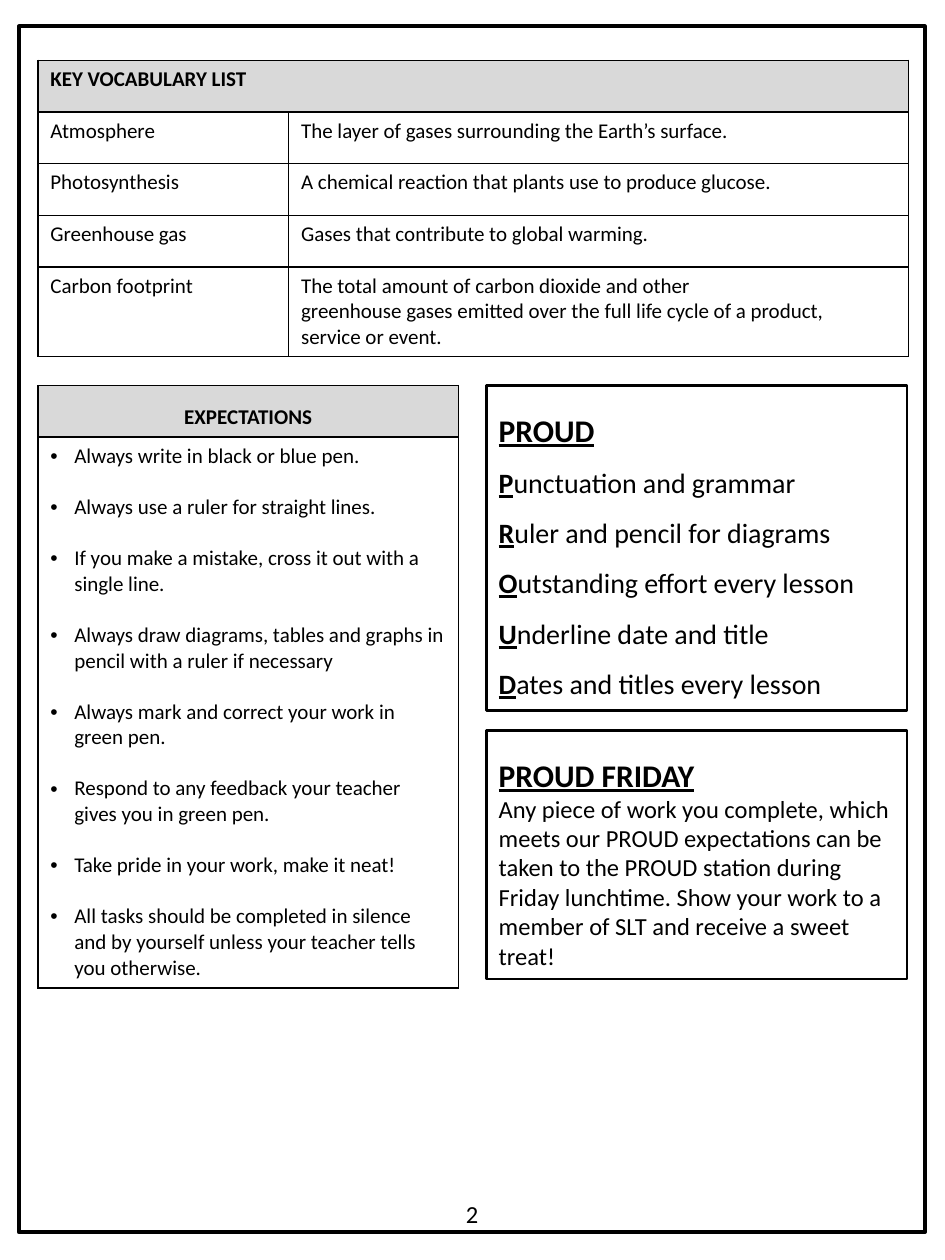
from lxml.etree import SubElement
from pptx import Presentation
from pptx.dml.color import RGBColor
from pptx.enum.shapes import MSO_SHAPE
from pptx.enum.text import MSO_ANCHOR, MSO_AUTO_SIZE, PP_ALIGN
from pptx.oxml.ns import qn
from pptx.util import Inches, Pt

COLORS = {"ink": "000000", "header": "D9D9D9"}
PLAIN = {"name": "Calibri", "size": Pt(12), "bold": False, "underline": False}
BOLD = PLAIN | {"bold": True}
HEADING = BOLD | {"size": Pt(18), "underline": True}
INITIAL = HEADING | {"size": Pt(16)}
REST = PLAIN | {"size": Pt(16)}
BODY = PLAIN | {"size": Pt(14)}
WIDE = {"line_spacing": 1.5}


def write_paragraph(frame, runs, layout):
    paragraph = frame.add_paragraph() if frame.text else frame.paragraphs[0]
    for name, value in ({"alignment": PP_ALIGN.LEFT} | layout).items():
        setattr(paragraph, name, value)
    for text, font_format in runs:
        run = paragraph.add_run()
        run.text = text
        for name, value in font_format.items():
            setattr(run.font, name, value)
        run.font.color.rgb = RGBColor.from_string(COLORS["ink"])
    return paragraph


def add_ruled_table(left, top, widths, heights):
    table = slide.shapes.add_table(
        len(heights), len(widths), Inches(left), Inches(top), Inches(sum(widths)), Inches(sum(heights))
    ).table
    table.first_row = False
    table.horz_banding = False
    for column, width in zip(table.columns, widths):
        column.width = Inches(width)
    for row, height in zip(table.rows, heights):
        row.height = Inches(height)
    for index, cell in enumerate(table.iter_cells()):
        properties = cell._tc.get_or_add_tcPr()
        for side in ("a:lnL", "a:lnR", "a:lnT", "a:lnB"):
            border = SubElement(properties, qn(side), w=str(Pt(1)))
            fill = SubElement(border, qn("a:solidFill"))
            SubElement(fill, qn("a:srgbClr"), val=COLORS["ink"])
        if index < len(widths):
            cell.fill.solid()
            cell.fill.fore_color.rgb = RGBColor.from_string(COLORS["header"])
        else:
            cell.fill.background()
    return table


presentation = Presentation()
presentation.slide_width = Inches(7.5)
presentation.slide_height = Inches(10)
slide = presentation.slides.add_slide(presentation.slide_layouts[6])

proud_lines = [([("PROUD", HEADING)], WIDE)]
for line in (
    "Punctuation and grammar",
    "Ruler and pencil for diagrams",
    "Outstanding effort every lesson",
    "Underline date and title",
    "Dates and titles every lesson",
):
    proud_lines.append(([(line[0], INITIAL), (line[1:], REST)], WIDE))

friday_lines = [
    ([("PROUD FRIDAY", HEADING)], WIDE),
    ([(
        "Any piece of work you complete, which meets our PROUD expectations can be taken "
        "to the PROUD station during Friday lunchtime. Show your work to a member of SLT "
        "and receive a sweet treat!", BODY,
    )], {}),
]

for left, top, width, height, line_width, lines in (
    (0.15, 0.21, 7.19, 9.57, 2.25, []),
    (3.86, 3.06, 3.34, 2.58, 1.5, proud_lines),
    (3.86, 5.8, 3.34, 1.97, 1.5, friday_lines),
):
    panel = slide.shapes.add_shape(
        MSO_SHAPE.RECTANGLE, Inches(left), Inches(top), Inches(width), Inches(height)
    )
    panel.shadow.inherit = False
    panel.fill.background()
    panel.line.color.rgb = RGBColor.from_string(COLORS["ink"])
    panel.line.width = Pt(line_width)
    panel.text_frame.word_wrap = True
    panel.text_frame.vertical_anchor = MSO_ANCHOR.TOP
    if lines:
        panel.text_frame.auto_size = MSO_AUTO_SIZE.SHAPE_TO_FIT_TEXT
    for runs, layout in lines:
        write_paragraph(panel.text_frame, runs, layout)

vocabulary = add_ruled_table(0.3, 0.48, [1.99, 4.92], [0.41, 0.41, 0.41, 0.41, 0.71])
vocabulary.cell(0, 0).merge(vocabulary.cell(0, 1))
write_paragraph(vocabulary.cell(0, 0).text_frame, [("KEY VOCABULARY LIST", BOLD)], {})
for row, (term, *meaning) in enumerate((
    ("Atmosphere", "The layer of gases surrounding the Earth’s surface."),
    ("Photosynthesis", "A chemical reaction that plants use to produce glucose."),
    ("Greenhouse gas", "Gases that contribute to global warming."),
    (
        "Carbon footprint",
        "The total amount of carbon dioxide and other",
        "greenhouse gases emitted over the full life cycle of a product,",
        "service or event.",
    ),
), start=1):
    write_paragraph(vocabulary.cell(row, 0).text_frame, [(term, PLAIN)], {})
    for line in meaning:
        write_paragraph(vocabulary.cell(row, 1).text_frame, [(line, PLAIN)], {})

expectations = add_ruled_table(0.3, 3.06, [3.34], [0.41, 4.37])
write_paragraph(
    expectations.cell(0, 0).text_frame,
    [("EXPECTATIONS", BOLD)],
    WIDE | {"alignment": PP_ALIGN.CENTER},
)
for index, rule in enumerate((
    "Always write in black or blue pen.",
    "Always use a ruler for straight lines.",
    "If you make a mistake, cross it out with a single line.",
    "Always draw diagrams, tables and graphs in pencil with a ruler if necessary",
    "Always mark and correct your work in green pen.",
    "Respond to any feedback your teacher gives you in green pen.",
    "Take pride in your work, make it neat!",
    "All tasks should be completed in silence and by yourself unless your teacher tells you otherwise.",
)):
    bullet = write_paragraph(
        expectations.cell(1, 0).text_frame,
        [(rule, PLAIN)],
        {"space_before": Pt(14.6 if index else 0)},
    )
    bullet_properties = bullet._p.get_or_add_pPr()
    bullet_properties.set("marL", str(Inches(0.19)))
    bullet_properties.set("indent", str(-Inches(0.19)))
    SubElement(bullet_properties, qn("a:buFont"), typeface="Arial")
    SubElement(bullet_properties, qn("a:buChar"), char="•")

page_number = slide.shapes.add_textbox(Inches(3.6), Inches(9.47), Inches(0.53), Inches(0.34))
page_number.text_frame.word_wrap = True
page_number.text_frame.auto_size = MSO_AUTO_SIZE.SHAPE_TO_FIT_TEXT
write_paragraph(page_number.text_frame, [("2", BODY)], {})

presentation.save("out.pptx")
